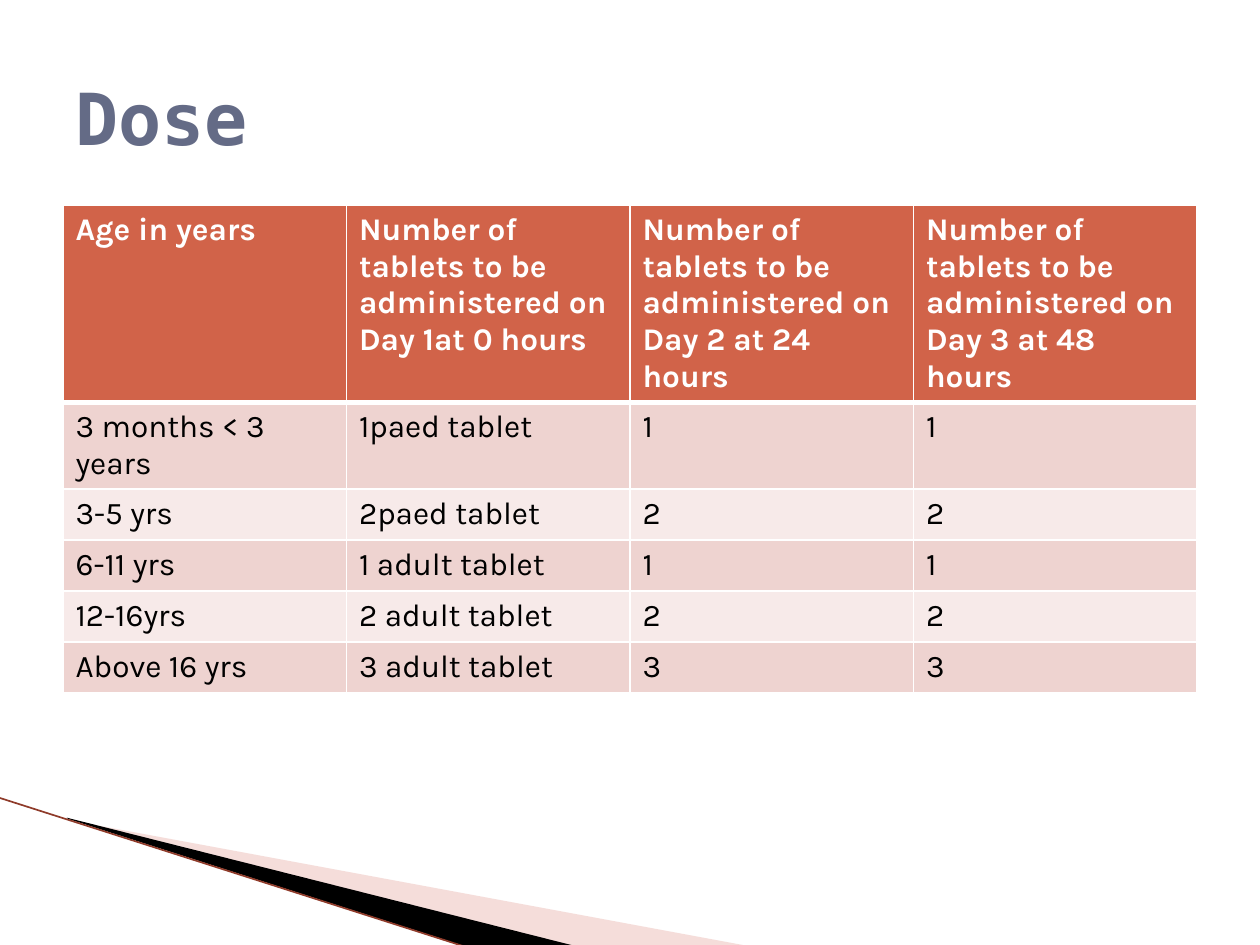
from dataclasses import dataclass

from lxml.etree import SubElement
from pptx import Presentation
from pptx.dml.color import RGBColor
from pptx.enum.shapes import MSO_CONNECTOR
from pptx.enum.text import MSO_ANCHOR
from pptx.oxml.ns import qn
from pptx.util import Pt


@dataclass(frozen=True)
class Theme:
    heading_font: str = "DejaVu Sans Mono"
    body_font: str = "Karla"
    title_size: float = 41
    table_size: float = 18
    title: str = "646B86"
    header: str = "D16349"
    bands: tuple = ("EED3D0", "F7EAE9")
    white: str = "FFFFFF"
    black: str = "000000"
    pale_wedge: str = "E7ACA4"
    edge: str = "8F3B2A"


THEME = Theme()

DOSES = [
    ("Age in years",
     "Number of tablets to be administered on Day 1at 0 hours",
     "Number of tablets to be administered on Day 2 at 24 hours",
     "Number of tablets to be administered on Day 3 at 48 hours"),
    ("3 months < 3 years", "1paed tablet", "1", "1"),
    ("3-5 yrs", "2paed tablet", "2", "2"),
    ("6-11 yrs", "1 adult tablet", "1", "1"),
    ("12-16yrs", "2 adult tablet", "2", "2"),
    ("Above 16 yrs", "3 adult tablet", "3", "3"),
]


def rgb(color):
    return RGBColor.from_string(color)


def add_run(p, text, font, size, color, bold):
    r = p.add_run()
    r.text = text
    r.font.name = font
    r.font.size = Pt(size)
    r.font.bold = bold
    r.font.color.rgb = rgb(color)


def add_wedge(slide, left, top, points, color, opacity=100):
    """Draw a filled polygon whose points are relative to left and top."""
    corners = [(Pt(left + x), Pt(top + y)) for x, y in points]
    builder = slide.shapes.build_freeform(*corners[0], scale=1.0)
    builder.add_line_segments(corners[1:], close=True)
    sp = builder.convert_to_shape()
    sp.shadow.inherit = False
    sp.line.fill.background()
    sp.fill.solid()
    sp.fill.fore_color.rgb = rgb(color)
    if opacity < 100:
        clr = sp.fill._xPr.find(".//" + qn("a:srgbClr"))
        SubElement(clr, qn("a:alpha"), val=str(opacity * 1000))


def add_corner_decoration(slide, left, top):
    add_wedge(slide, left, top,
              [(39.6, 12.7), (428.4, 84.7), (328.3, 84.7), (39.6, 12)],
              THEME.pale_wedge, opacity=40)
    add_wedge(slide, left, top,
              [(38.2, 11.3), (329, 84.7), (267.8, 85.4), (38.9, 12)],
              THEME.black)
    line = slide.shapes.add_connector(
        MSO_CONNECTOR.STRAIGHT, Pt(left - 0.7), Pt(top - 0.2),
        Pt(left + 267.1), Pt(top + 85.4))
    line.line.color.rgb = rgb(THEME.edge)
    line.line.width = Pt(0.95)
    SubElement(line._element.spPr, qn("a:effectLst"))


def add_title(slide, left, top, width, height):
    box = slide.shapes.add_textbox(Pt(left), Pt(top), Pt(width), Pt(height))
    tf = box.text_frame
    tf.word_wrap = True
    tf.vertical_anchor = MSO_ANCHOR.MIDDLE
    add_run(tf.paragraphs[0], "Dose", THEME.heading_font, THEME.title_size,
            THEME.title, True)


def set_borders(cell, bottom_width):
    """Put white borders on a cell; call before filling it."""
    tcPr = cell._tc.get_or_add_tcPr()
    for side, width in (("L", 1), ("R", 1), ("T", 1), ("B", bottom_width)):
        ln = SubElement(tcPr, qn(f"a:ln{side}"), w=str(Pt(width)))
        fill = SubElement(ln, qn("a:solidFill"))
        SubElement(fill, qn("a:srgbClr"), val=THEME.white)


def add_dose_table(slide, left, top, width, row_height):
    rows, cols = len(DOSES), len(DOSES[0])
    table = slide.shapes.add_table(rows, cols, Pt(left), Pt(top), Pt(width),
                                   Pt(row_height * rows)).table
    for col in table.columns:
        col.width = Pt(width / cols)
    for i, texts in enumerate(DOSES):
        table.rows[i].height = Pt(row_height)
        is_header = i == 0
        for j, text in enumerate(texts):
            cell = table.cell(i, j)
            # The rule below the header is heavy, seen from both rows.
            set_borders(cell, 3 if is_header else 1)
            if i == 1:
                cell._tc.tcPr.find(qn("a:lnT")).set("w", str(Pt(3)))
            cell.fill.solid()
            cell.fill.fore_color.rgb = rgb(
                THEME.header if is_header else THEME.bands[(i - 1) % 2])
            add_run(cell.text_frame.paragraphs[0], text, THEME.body_font,
                    THEME.table_size,
                    THEME.white if is_header else THEME.black, is_header)


def main():
    prs = Presentation()
    prs.slide_width, prs.slide_height = Pt(720), Pt(540)
    slide = prs.slides.add_slide(prs.slide_layouts[6])
    add_corner_decoration(slide, 0, 456)
    add_dose_table(slide, 36, 117, 648, 29.2)
    add_title(slide, 36, 21.6, 648, 90)
    prs.save("out.pptx")


if __name__ == "__main__":
    main()
